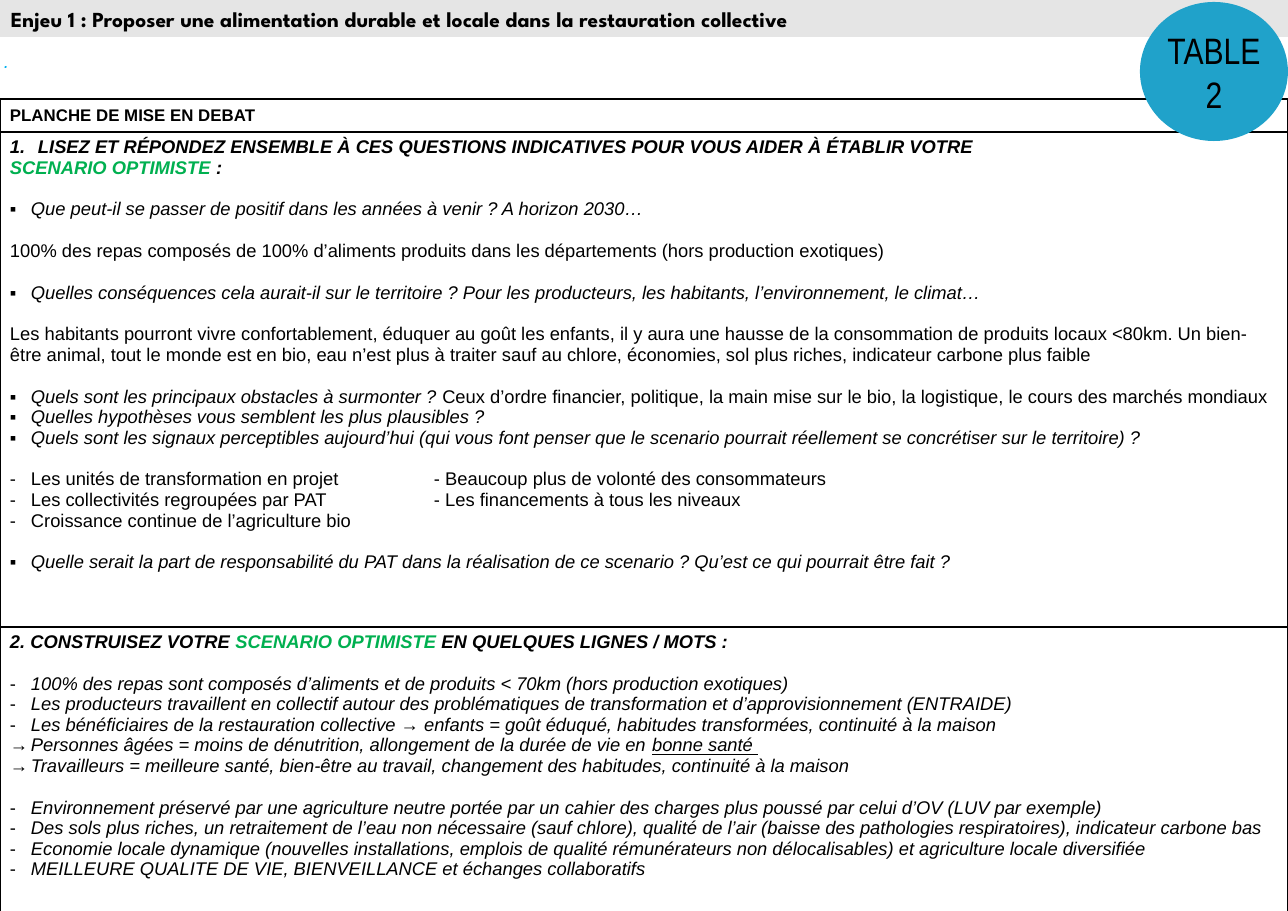
from lxml import etree
from pptx import Presentation
from pptx import util as u
from pptx.dml.color import RGBColor
from pptx.enum import shapes, text
from pptx.oxml import ns

BLACK = RGBColor(0x00, 0x00, 0x00)
WHITE = RGBColor(0xFF, 0xFF, 0xFF)
GREY = RGBColor(0xE5, 0xE5, 0xE5)
GREEN = RGBColor(0x00, 0xB0, 0x50)
SKY = RGBColor(0x00, 0xB0, 0xF0)
BLUE = RGBColor(0x20, 0xA2, 0xCA)

SCALE = 8300
WIDTH, HEIGHT = 1288, 911
TABLE_TOP = 99
ROW_HEIGHTS = [33, 495, 319]
INDENT, NUMBER_INDENT, TAB_STOP = 21, 28, 424
BLANK_LINE = u.Pt(13.8)

TITLE = "Enjeu 1 : Proposer une alimentation durable et locale dans la restauration collective"

HEADING = [(0, "", [("PLANCHE DE MISE EN DEBAT", "b")])]
QUESTIONS = [
    (0, "1.", [("LISEZ ET RÉPONDEZ ENSEMBLE À CES QUESTIONS INDICATIVES POUR VOUS AIDER À ÉTABLIR VOTRE", "bi")]),
    (0, "", [("SCENARIO OPTIMISTE ", "big"), (":", "bi")]),
    (1, "▪", [("Que peut-il se passer de positif dans les années à venir ? A horizon 2030…", "i")]),
    (1, "", [("100% des repas composés de 100% d’aliments produits dans les départements (hors production exotiques)", "")]),
    (1, "▪", [("Quelles conséquences cela aurait-il sur le territoire ? Pour les producteurs, les habitants, l’environnement, le climat…", "i")]),
    (1, "", [("Les habitants pourront vivre confortablement, éduquer au goût les enfants, il y aura une hausse de la consommation de produits locaux <80km. Un bien-être animal, tout le monde est en bio, eau n’est plus à traiter sauf au chlore, économies, sol plus riches, indicateur carbone plus faible", "")]),
    (1, "▪", [("Quels sont les principaux obstacles à surmonter ? ", "i"),
              ("Ceux d’ordre financier, politique, la main mise sur le bio, la logistique, le cours des marchés mondiaux", "")]),
    (0, "▪", [("Quelles hypothèses vous semblent les plus plausibles ?", "i")]),
    (0, "▪", [("Quels sont les signaux perceptibles aujourd’hui (qui vous font penser que le scenario pourrait réellement se concrétiser sur le territoire) ?", "i")]),
    (1, "-", [("Les unités de transformation en projet\t- Beaucoup plus de volonté des consommateurs", "")]),
    (0, "-", [("Les collectivités regroupées par PAT\t- Les financements à tous les niveaux", "")]),
    (0, "-", [("Croissance continue de l’agriculture bio", "")]),
    (1, "▪", [("Quelle serait la part de responsabilité du PAT dans la réalisation de ce scenario ? Qu’est ce qui pourrait être fait ?", "i")]),
]
SCENARIO = [
    (0, "", [("2. CONSTRUISEZ VOTRE ", "bi"), ("SCENARIO OPTIMISTE ", "big"), ("EN QUELQUES LIGNES / MOTS :", "bi")]),
    (1, "-", [("100% des repas sont composés d’aliments et de produits < 70km (hors production exotiques)", "i")]),
    (0, "-", [("Les producteurs travaillent en collectif autour des problématiques de transformation et d’approvisionnement (ENTRAIDE)", "i")]),
    (0, "-", [("Les bénéficiaires de la restauration collective → enfants = goût éduqué, habitudes transformées, continuité à la maison", "i")]),
    (0, "→", [("Personnes âgées = moins de dénutrition, allongement de la durée de vie en ", "i"), ("bonne santé ", "iu")]),
    (0, "→", [("Travailleurs = meilleure santé, bien-être au travail, changement des habitudes, continuité à la maison", "i")]),
    (1, "-", [("Environnement préservé par une agriculture neutre portée par un cahier des charges plus poussé par celui d’OV (LUV par exemple)", "i")]),
    (0, "-", [("Des sols plus riches, un retraitement de l’eau non nécessaire (sauf chlore), qualité de l’air (baisse des pathologies respiratoires), indicateur carbone bas", "i")]),
    (0, "-", [("Economie locale dynamique (nouvelles installations, emplois de qualité rémunérateurs non délocalisables) et agriculture locale diversifiée", "i")]),
    (0, "-", [("MEILLEURE QUALITE DE VIE, BIENVEILLANCE et échanges collaboratifs", "i")]),
]
SECTIONS = [(HEADING, 11), (QUESTIONS, 12), (SCENARIO, 12)]


def px(length):
    return u.Emu(length * SCALE)


def element(parent, tag, **attributes):
    child = etree.SubElement(parent, ns.qn(tag))
    for name, value in attributes.items():
        child.set(name, str(value))
    return child


def add_run(paragraph, words, size, color=BLACK, font="Arial", style=""):
    run = paragraph.add_run()
    run.text = words
    run.font.name = font
    run.font.size = u.Pt(size)
    run.font.bold = "b" in style
    run.font.italic = "i" in style
    run.font.underline = "u" in style
    run.font.color.rgb = color


def add_bullet(paragraph, bullet, has_tab):
    properties = paragraph._p.get_or_add_pPr()
    indent = px(NUMBER_INDENT if bullet == "1." else INDENT)
    properties.set("marL", str(indent))
    properties.set("indent", str(-indent))
    element(element(properties, "a:buClr"), "a:srgbClr", val=BLACK)
    element(properties, "a:buFont", typeface="Arial")
    if bullet == "1.":
        element(properties, "a:buAutoNum", type="arabicPeriod")
    else:
        element(properties, "a:buChar", char=bullet)
    if has_tab:
        element(element(properties, "a:tabLst"), "a:tab", pos=px(TAB_STOP), algn="l")


def fill_cell(cell, paragraphs, size):
    cell.margin_left = cell.margin_right = px(10)
    cell.margin_top = cell.margin_bottom = px(5)
    properties = cell._tc.get_or_add_tcPr()
    for side in ("a:lnL", "a:lnR", "a:lnT", "a:lnB"):
        line = element(properties, side, w=u.Pt(1))
        element(element(line, "a:solidFill"), "a:srgbClr", val=BLACK)
    cell.fill.solid()
    cell.fill.fore_color.rgb = WHITE
    for index, (gap, bullet, runs) in enumerate(paragraphs):
        frame = cell.text_frame
        paragraph = frame.paragraphs[0] if index == 0 else frame.add_paragraph()
        if bullet:
            add_bullet(paragraph, bullet, "\t" in runs[0][0])
        if gap:
            paragraph.space_before = BLANK_LINE
        for words, style in runs:
            add_run(paragraph, words, size, GREEN if "g" in style else BLACK, style=style)


def add_label(slide, kind, box, fill, anchor, margins, align, words, **look):
    shape = slide.shapes.add_shape(kind, *map(px, box))
    shape.shadow.inherit = False
    shape.fill.solid()
    shape.fill.fore_color.rgb = fill
    shape.line.fill.background()
    frame = shape.text_frame
    frame.word_wrap = True
    frame.vertical_anchor = anchor
    frame.margin_left = frame.margin_right = px(margins[0])
    frame.margin_top = frame.margin_bottom = px(margins[1])
    paragraph = frame.paragraphs[0]
    paragraph.alignment = align
    add_run(paragraph, words, **look)


def main():
    presentation = Presentation()
    presentation.slide_width, presentation.slide_height = px(WIDTH), px(HEIGHT)
    slide = presentation.slides.add_slide(presentation.slide_layouts[6])
    kinds, anchors, aligns = shapes.MSO_SHAPE, text.MSO_ANCHOR, text.PP_ALIGN

    add_label(slide, kinds.RECTANGLE, (0, 0, WIDTH, 78), WHITE, anchors.BOTTOM, (4, 6),
              aligns.LEFT, ".", size=12.3, color=SKY, style="i")

    table = slide.shapes.add_table(len(SECTIONS), 1, 0, px(TABLE_TOP), px(WIDTH), px(sum(ROW_HEIGHTS))).table
    table.first_row = table.horz_banding = False
    for index, (paragraphs, size) in enumerate(SECTIONS):
        table.rows[index].height = px(ROW_HEIGHTS[index])
        fill_cell(table.cell(index, 0), paragraphs, size)
    table.cell(0, 0).vertical_anchor = anchors.MIDDLE

    add_label(slide, kinds.RECTANGLE, (0, 0, WIDTH, 37), GREY, anchors.TOP, (11, 6),
              aligns.LEFT, TITLE, size=14, font="League Spartan", style="b")
    add_label(slide, kinds.OVAL, (1140, 2, 148, 139), BLUE, anchors.MIDDLE, (4, 4),
              aligns.CENTER, "TABLE 2", size=24, font="Arial Narrow")
    presentation.save("out.pptx")


if __name__ == "__main__":
    main()
